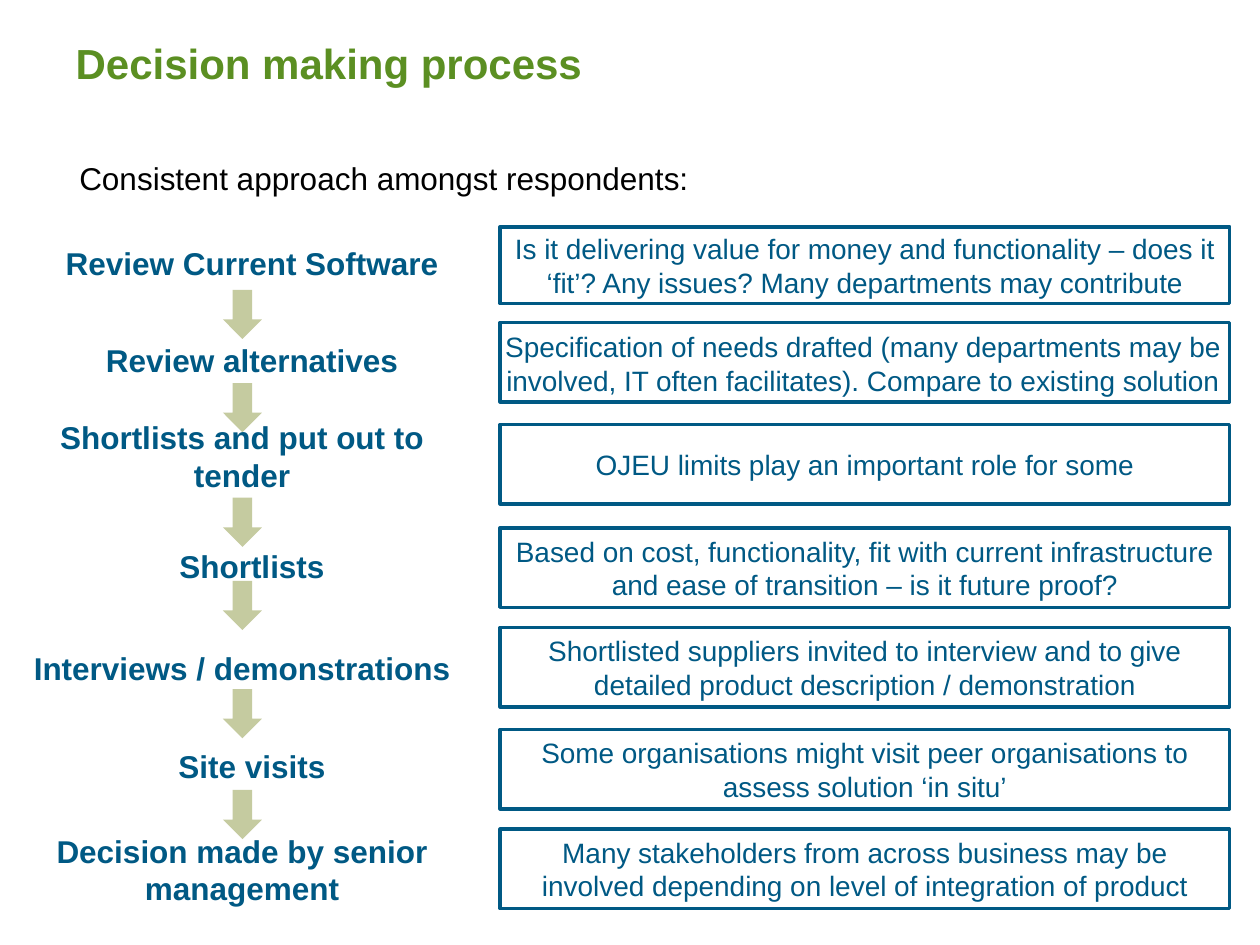
from pptx import Presentation
from pptx.dml.color import RGBColor as Rgb
from pptx.enum.shapes import MSO_SHAPE as Kind
from pptx.enum.text import MSO_ANCHOR as Anchor, MSO_AUTO_SIZE as Fit, PP_ALIGN as Align
from pptx.util import Pt

HUES = {"title": "5B8F22", "blue": "005984", "arrow": "C5CBA0", "ink": "000000"}

STEPS = [
    ("Review Current Software", 7.9, 136.1, 28.8, 129.6, 43.9,
     "Is it delivering value for money and functionality – does it ‘fit’? "
     "Any issues? Many departments may contribute"),
    ("Review alternatives", 7.9, 191.5, 28.8, 184.3, 45.4, ""),
    ("Shortlists and put out to tender", 2.2, 235.4, 51.1, 242.6, 45.4,
     "OJEU limits play an important role for some"),
    ("Shortlists", 7.9, 308.9, 28.8, 301.7, 45.4,
     "Based on cost, functionality, fit with current infrastructure "
     "and ease of transition – is it future proof?"),
    ("Interviews / demonstrations", 2.2, 367.2, 32.4, 358.6, 45.4,
     "Shortlisted suppliers invited to interview and to give "
     "detailed product description / demonstration"),
    ("Site visits", 7.9, 423.4, 28.8, 416.9, 45.4,
     "Some organisations might visit peer organisations to "
     "assess solution ‘in situ’"),
    ("Decision made by senior management", 2.2, 471.6, 51.1, 473.8, 45.4,
     "Many stakeholders from across business may be "
     "involved depending on level of integration of product"),
]
DROPS = [165.6, 218.9, 284.4, 331.9, 393.8, 451.4]
SPEC = ("Specification of needs drafted (many departments may be involved, "
        "IT often facilitates). Compare to existing solution")


class Deck:
    """Holds the style and the current slide."""

    font = "Arial"

    def __init__(self, slide):
        self.slide = slide
        self.items = slide.shapes

    def label(self, shape, text, size, hue, bold=False, align=Align.CENTER,
              anchor=Anchor.MIDDLE, pad=3.6):
        frame = shape.text_frame
        frame.auto_size = Fit.NONE
        frame.word_wrap = True
        frame.vertical_anchor = anchor
        frame.margin_left = frame.margin_right = Pt(7.2)
        frame.margin_top = frame.margin_bottom = Pt(pad)
        para = frame.paragraphs[0]
        para.alignment = align
        run = para.add_run()
        run.text = text
        run.font.name = self.font
        run.font.size = Pt(size)
        run.font.bold = bold
        run.font.color.rgb = Rgb.from_string(HUES[hue])

    def title(self, text, x, y, w, h):
        shape = self.items.title
        shape.left, shape.top, shape.width, shape.height = map(Pt, (x, y, w, h))
        self.label(shape, text, 24, "title", True, Align.LEFT, pad=7.2)

    def text(self, text, x, y, w, h, size, hue, **style):
        shape = self.items.add_textbox(*map(Pt, (x, y, w, h)))
        self.label(shape, text, size, hue, **style)

    def box(self, text, x, y, w, h):
        shape = self.items.add_shape(Kind.RECTANGLE, *map(Pt, (x, y, w, h)))
        shape.shadow.inherit = False
        shape.fill.background()
        shape.line.color.rgb = Rgb.from_string(HUES["blue"])
        shape.line.width = Pt(2)
        if text:
            self.label(shape, text, 16, "blue")

    def arrow(self, x, y, w, h):
        shape = self.items.add_shape(Kind.DOWN_ARROW, *map(Pt, (x, y, w, h)))
        shape.shadow.inherit = False
        shape.fill.solid()
        shape.fill.fore_color.rgb = Rgb.from_string(HUES["arrow"])
        shape.line.fill.background()


def main():
    show = Presentation()
    show.slide_width, show.slide_height = Pt(720), Pt(540)
    deck = Deck(show.slides.add_slide(show.slide_layouts[5]))
    deck.title("Decision making process", 36, 21.6, 576, 28.8)
    deck.text("Consistent approach amongst respondents:", 38.2, 83.5, 638, 45.4,
              18, "ink", align=Align.LEFT, anchor=Anchor.TOP, pad=7.2)
    for y in DROPS:
        deck.arrow(127.4, y, 22.3, 28.1)
    for name, x, y, h, top, tall, note in STEPS:
        deck.text(name, x, y, 272.2, h, 18, "blue", bold=True, anchor=Anchor.TOP)
        deck.box(note, 285.8, top, 416.9, tall)
    deck.text(SPEC, 276.5, 185, 433.4, 45.4, 16, "blue")
    show.save("out.pptx")


if __name__ == "__main__":
    main()
